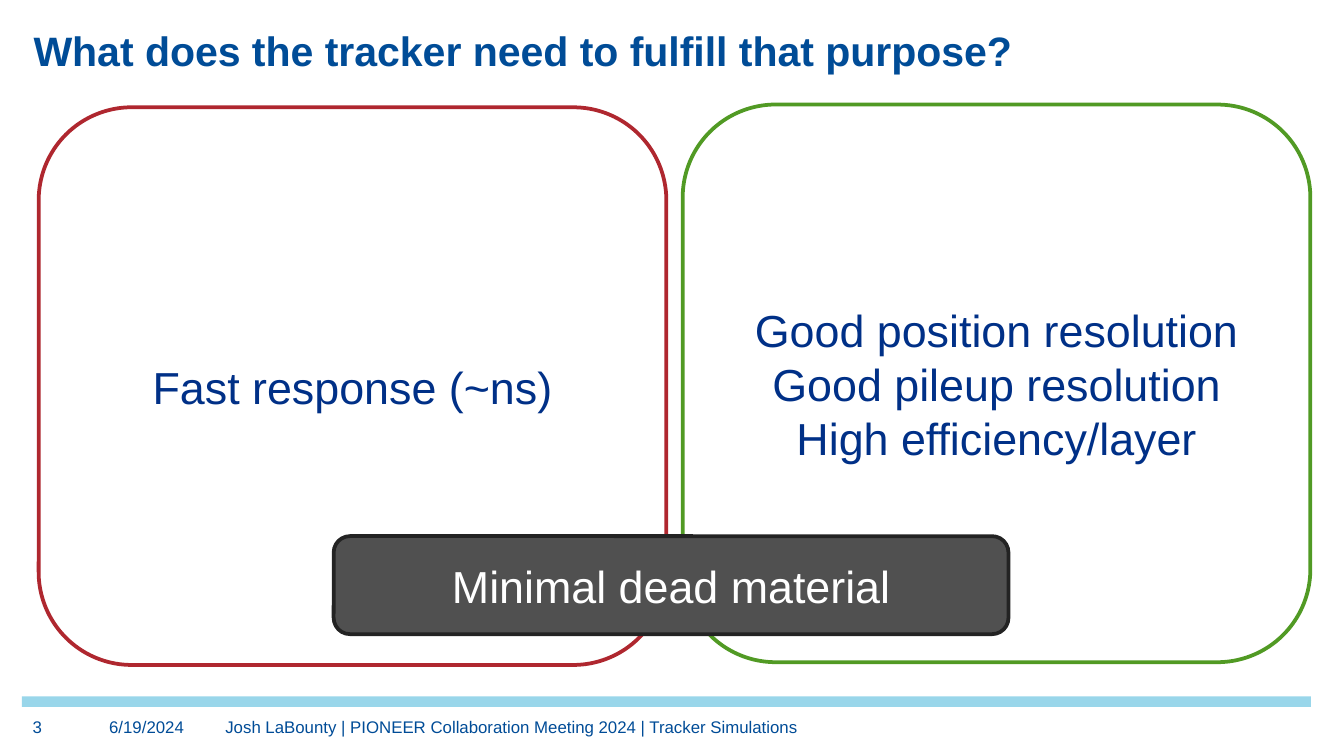
from pptx import Presentation
from pptx.dml.color import RGBColor
from pptx.enum.shapes import MSO_SHAPE
from pptx.enum.text import MSO_ANCHOR, PP_ALIGN
from pptx.util import Pt

COLORS = {
    "white": "FFFFFF", "title": "004C97", "body": "003087", "rule": "99D6EA",
    "red": "AF272F", "green": "519A24", "dark": "505050", "edge": "232323",
}


def color(name):
    return RGBColor.from_string(COLORS[name])


def write(frame, lines, ink, align=PP_ALIGN.LEFT, **form):
    """Fill a text frame, one paragraph per line."""
    frame.word_wrap = True
    frame.text = "\n".join(lines)
    for para in frame.paragraphs:
        para.alignment = align
        for key, value in {"name": "Arial", **form}.items():
            setattr(para.font, key, value)
        para.font.color.rgb = color(ink)


def label(slide, box, text, anchor=MSO_ANCHOR.TOP, **form):
    """Place a text box without margins."""
    frame = slide.shapes.add_textbox(*map(Pt, box)).text_frame
    for side in ("left", "top", "right", "bottom"):
        setattr(frame, "margin_" + side, 0)
    frame.vertical_anchor = anchor
    write(frame, [text], "title", **form)


def block(slide, box, kind, fill, edge=None):
    """Place a filled shape, with a border if an edge colour is given."""
    shape = slide.shapes.add_shape(kind, *map(Pt, box))
    shape.shadow.inherit = False
    shape.fill.solid()
    shape.fill.fore_color.rgb = color(fill)
    if edge:
        shape.line.color.rgb = color(edge)
        shape.line.width = Pt(2)
    else:
        shape.line.fill.background()
    return shape


def card(slide, box, lines, fill, edge, ink):
    """Place a rounded card with centred lines."""
    shape = block(slide, box, MSO_SHAPE.ROUNDED_RECTANGLE, fill, edge)
    shape.text_frame.vertical_anchor = MSO_ANCHOR.MIDDLE
    write(shape.text_frame, lines, ink, PP_ALIGN.CENTER, size=Pt(24))


def footer(slide, box):
    """Place the rule with page number, date and talk name below it."""
    left, top, width, height = box
    block(slide, (left, top, width, 5.75), MSO_SHAPE.RECTANGLE, "rule")
    parts = [
        (5.75, 32.5, "3"),
        (46.75, 53, "6/19/2024"),
        (109, 493, "Josh LaBounty | PIONEER Collaboration Meeting 2024 | Tracker Simulations"),
    ]
    for shift, span, text in parts:
        label(slide, (left + shift, top + 11, span, height - 11), text, size=Pt(9))


def needs(slide, box):
    """Place two cards side by side and the shared need across them."""
    left, top, width, height = box
    wide, tall = 336.25, height - 1.5
    right = left + width - wide
    card(slide, (left, top + 1.5, wide, tall), ["Fast response (~ns)"],
         "white", "red", "body")
    card(slide, (right, top, wide, tall),
         ["Good position resolution", "Good pileup resolution", "High efficiency/layer"],
         "white", "green", "body")
    card(slide, (left + 158, top + 231.25, 361.5, 52.5), ["Minimal dead material"],
         "dark", "edge", "white")


def main():
    deck = Presentation()
    deck.slide_width, deck.slide_height = Pt(720), Pt(405)
    slide = deck.slides.add_slide(deck.slide_layouts[6])
    footer(slide, (11.75, 373, 690.5, 25.25))
    label(slide, (18, 15, 684, 25.25), "What does the tracker need to fulfill that purpose?",
          MSO_ANCHOR.BOTTOM, size=Pt(22), bold=True)
    needs(slide, (20.75, 56, 681.25, 300.25))
    deck.save("out.pptx")


if __name__ == "__main__":
    main()
